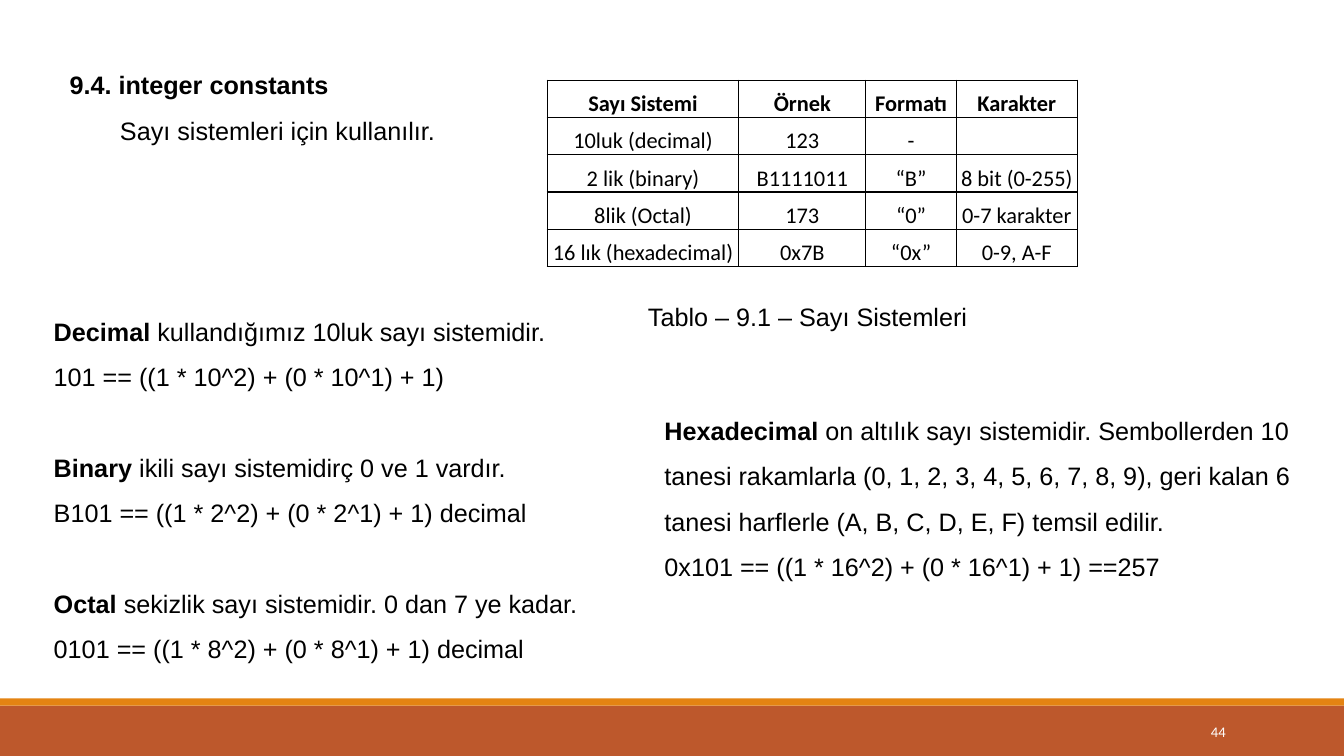
"""Build the slide about integer constants in different number systems."""
from lxml import etree
from pptx import Presentation
from pptx import util as u
from pptx.dml.color import RGBColor
from pptx.enum import shapes, text
from pptx.oxml import ns

BLACK = RGBColor(0x00, 0x00, 0x00)
WHITE = RGBColor(0xFF, 0xFF, 0xFF)
RUST = RGBColor(0xBD, 0x58, 0x2C)
ORANGE = RGBColor(0xE4, 0x83, 0x12)
LEFT, CENTER, RIGHT = text.PP_ALIGN.LEFT, text.PP_ALIGN.CENTER, text.PP_ALIGN.RIGHT
GAP = 32.5

HEADING = [("9.4. integer constants", "", 0, 0),
           ("", "Sayı sistemleri için kullanılır.", 0, 1.27)]
SYSTEMS = [
    ("Decimal ", "kullandığımız 10luk sayı sistemidir.", 0, 0),
    ("", "101 == ((1 * 10^2) + (0 * 10^1) + 1)", 0, 0),
    ("Binary ", "ikili sayı sistemidirç 0 ve 1 vardır.", GAP, 0),
    ("", "B101 == ((1 * 2^2) + (0 * 2^1) + 1) decimal", 0, 0),
    ("Octal ", "sekizlik sayı sistemidir. 0 dan 7 ye kadar.", GAP, 0),
    ("", "0101 == ((1 * 8^2) + (0 * 8^1) + 1) decimal", 0, 0),
]
HEXADECIMAL = [
    ("Hexadecimal ", "on altılık sayı sistemidir. Sembollerden 10 tanesi rakamlarla "
     "(0, 1, 2, 3, 4, 5, 6, 7, 8, 9), geri kalan 6 tanesi harflerle "
     "(A, B, C, D, E, F) temsil edilir.", 0, 0),
    ("", "0x101 == ((1 * 16^2) + (0 * 16^1) + 1) ==257", 0, 0),
]
TABLE_ROWS = [
    ("Sayı Sistemi", "Örnek", "Formatı", "Karakter"),
    ("10luk (decimal)", "123", "-", ""),
    ("2 lik (binary)", "B1111011", "“B”", "8 bit (0-255)"),
    ("8lik (Octal)", "173", "“0”", "0-7 karakter"),
    ("16 lık (hexadecimal)", "0x7B", "“0x”", "0-9, A-F"),
]
COLUMN_WIDTHS = (4.83, 3.2, 2.28, 3.05)
ROW_HEIGHT = 0.94


def style_font(paragraph, name, size, color, align):
    """Set the font and alignment shared by a whole paragraph."""
    paragraph.alignment = align
    paragraph.font.name = name
    paragraph.font.size = u.Pt(size)
    paragraph.font.color.rgb = color


def place(box, left, top, width, height):
    """Move and size a shape, in centimetres."""
    box.left, box.top = u.Cm(left), u.Cm(top)
    box.width, box.height = u.Cm(width), u.Cm(height)


def fill_prose(box, lines):
    """Fill a placeholder with lines that open with an optional bold term."""
    frame = box.text_frame
    frame.word_wrap = True
    frame.auto_size = text.MSO_AUTO_SIZE.NONE
    frame.vertical_anchor = text.MSO_ANCHOR.TOP
    for index, (term, rest, gap, indent) in enumerate(lines):
        para = frame.add_paragraph() if index else frame.paragraphs[0]
        properties = para._p.get_or_add_pPr()
        properties.set("marL", str(u.Cm(indent)))
        properties.set("indent", "0")
        etree.SubElement(properties, ns.qn("a:buNone"))
        para.line_spacing = 1.5
        para.space_before = u.Pt(gap)
        para.space_after = u.Pt(0)
        style_font(para, "Arial", 18, BLACK, LEFT)
        for words, bold in ((term, True), (rest, False)):
            if words:
                span = para.add_run()
                span.text = words
                span.font.bold = bold


def add_label(page, words, area, font, size, color, align, wrap):
    """Add a one-line text box."""
    box = page.shapes.add_textbox(*map(u.Cm, area))
    frame = box.text_frame
    frame.word_wrap = wrap
    frame.vertical_anchor = text.MSO_ANCHOR.MIDDLE
    frame.text = words
    style_font(frame.paragraphs[0], font, size, color, align)


def add_bar(page, top, height, color):
    """Add a full-width bar."""
    bar = page.shapes.add_shape(shapes.MSO_SHAPE.RECTANGLE, 0, u.Cm(top),
                                u.Cm(33.87), u.Cm(height))
    bar.shadow.inherit = False
    bar.fill.solid()
    bar.fill.fore_color.rgb = color
    bar.line.fill.background()


def add_borders(cell):
    """Draw a thin black line on each side of a cell."""
    properties = cell._tc.get_or_add_tcPr()
    for index, side in enumerate(("lnL", "lnR", "lnT", "lnB")):
        line = etree.Element(ns.qn(f"a:{side}"), w=str(u.Pt(1)))
        solid = etree.SubElement(line, ns.qn("a:solidFill"))
        etree.SubElement(solid, ns.qn("a:srgbClr"), val=str(BLACK))
        properties.insert(index, line)


def add_number_table(page):
    """Add the table of number systems."""
    frame = page.shapes.add_table(
        len(TABLE_ROWS), len(COLUMN_WIDTHS), u.Cm(13.79), u.Cm(2.02),
        u.Cm(sum(COLUMN_WIDTHS)), u.Cm(ROW_HEIGHT * len(TABLE_ROWS)))
    table = frame.table
    table.horz_banding = False
    for column, width in zip(table.columns, COLUMN_WIDTHS):
        column.width = u.Cm(width)
    for row_index, words in enumerate(TABLE_ROWS):
        table.rows[row_index].height = u.Cm(ROW_HEIGHT)
        for cell, word in zip(table.rows[row_index].cells, words):
            cell.text = word
            cell.fill.background()
            cell.vertical_anchor = text.MSO_ANCHOR.BOTTOM
            cell.margin_left = cell.margin_right = cell.margin_top = u.Cm(0.03)
            cell.margin_bottom = 0
            para = cell.text_frame.paragraphs[0]
            style_font(para, "Calibri", 16, BLACK, CENTER)
            para.font.bold = row_index == 0
            add_borders(cell)


def main():
    """Build and save the deck."""
    deck = Presentation()
    deck.slide_width, deck.slide_height = u.Cm(33.87), u.Cm(19.05)
    page = deck.slides.add_slide(deck.slide_layouts.get_by_name("Two Content"))
    title, systems, hexadecimal = list(page.placeholders)[:3]

    add_bar(page, 17.78, 1.27, RUST)
    add_bar(page, 17.6, 0.18, ORANGE)
    place(title, 1.5, 1.25, 16.93, 2.44)
    fill_prose(title, HEADING)
    add_number_table(page)
    add_label(page, "Tablo – 9.1 – Sayı Sistemleri", (16.08, 7.45, 8.82, 1.03),
              "Arial", 18, BLACK, LEFT, False)
    place(systems, 1.1, 7.45, 14.58, 9.37)
    fill_prose(systems, SYSTEMS)
    place(hexadecimal, 16.49, 9.96, 16.93, 4.75)
    fill_prose(hexadecimal, HEXADECIMAL)
    add_label(page, "44", (27.51, 17.93, 3.63, 1.02), "Calibri", 10.5, WHITE, RIGHT, True)
    deck.save("out.pptx")


if __name__ == "__main__":
    main()
